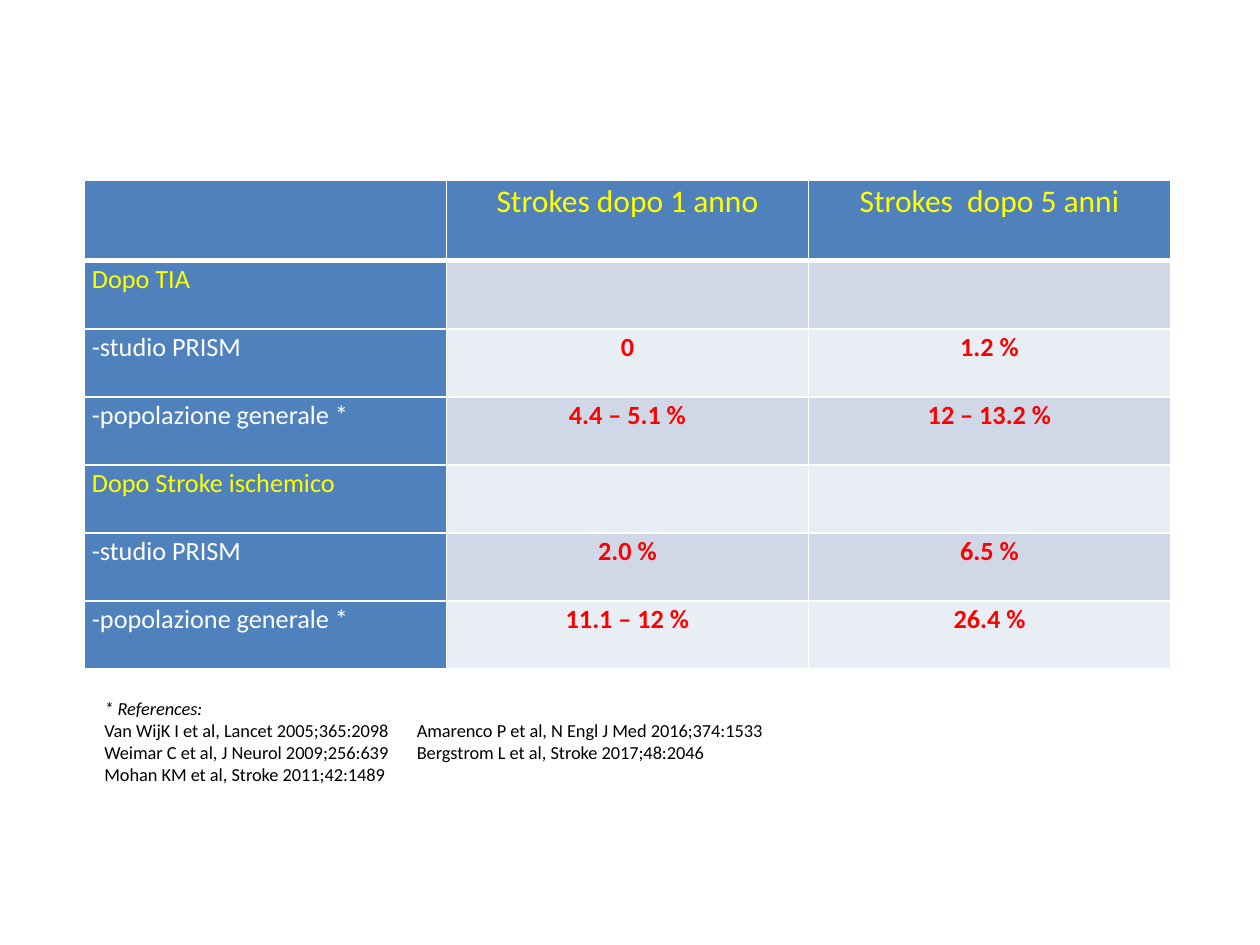
from dataclasses import dataclass

import pptx
import pptx.dml.color
import pptx.enum.text
import pptx.oxml
import pptx.oxml.ns
import pptx.util

Inches = pptx.util.Inches
Pt = pptx.util.Pt
ALIGN = pptx.enum.text.PP_ALIGN
FONT = "Calibri"
COLORS = {
    "blue": "4F81BD",
    "dark": "D0D8E8",
    "light": "E9EDF4",
    "yellow": "FFFF00",
    "white": "FFFFFF",
    "red": "FF0000",
    "black": "000000",
}


@dataclass
class Style:
    size: float
    color: str
    bold: bool = False
    italic: bool = False
    align: ALIGN = ALIGN.LEFT


@dataclass
class Row:
    label: str
    year: str = ""
    five: str = ""


HEAD = Style(18, "yellow", align=ALIGN.CENTER)
GROUP = Style(15, "yellow")
LABEL = Style(15, "white")
VALUE = Style(15, "red", bold=True, align=ALIGN.CENTER)
TITLE = Style(10.5, "black", italic=True)
NOTE = Style(10.5, "black")

ROWS = [
    Row("", "Strokes dopo 1 anno", "Strokes  dopo 5 anni"),
    Row("Dopo TIA"),
    Row("-studio PRISM", "0", "1.2 %"),
    Row("-popolazione generale *", "4.4 – 5.1 %", "12 – 13.2 %"),
    Row("Dopo Stroke ischemico"),
    Row("-studio PRISM", "2.0 %", "6.5 %"),
    Row("-popolazione generale *", "11.1 – 12 %", "26.4 %"),
]
NOTES = [
    "* References:",
    "Van WijK I et al, Lancet 2005;365:2098\tAmarenco P et al, N Engl J Med 2016;374:1533",
    "Weimar C et al, J Neurol 2009;256:639\tBergstrom L et al, Stroke 2017;48:2046",
    "Mohan KM et al, Stroke 2011;42:1489",
]


def rgb(name: str) -> pptx.dml.color.RGBColor:
    return pptx.dml.color.RGBColor.from_string(COLORS[name])


def style_text(para, style: Style) -> None:
    para.alignment = style.align
    for run in para.runs:
        font = run.font
        font.name = FONT
        font.size = Pt(style.size)
        font.bold = style.bold
        font.italic = style.italic
        font.color.rgb = rgb(style.color)


def add_edges(cell, base: float) -> None:
    """Draw white cell borders, 1 pt but for the bottom one."""
    props = cell._tc.get_or_add_tcPr()
    widths = {"lnL": 1, "lnR": 1, "lnT": 1, "lnB": base}
    for spot, (tag, width) in enumerate(widths.items()):
        edge = pptx.oxml.parse_xml(
            f'<a:{tag} {pptx.oxml.ns.nsdecls("a")} w="{Pt(width)}">'
            f'<a:solidFill><a:srgbClr val="{COLORS["white"]}"/></a:solidFill></a:{tag}>'
        )
        props.insert(spot, edge)


def fill_cell(cell, text: str, fill: str, style: Style, base: float) -> None:
    cell.fill.solid()
    cell.fill.fore_color.rgb = rgb(fill)
    add_edges(cell, base)
    if text:
        cell.margin_left = cell.margin_right = Inches(0.06)
        cell.margin_top = cell.margin_bottom = 0
        cell.text_frame.text = text
        para = cell.text_frame.paragraphs[0]
        para.line_spacing = 1.07
        style_text(para, style)


def add_rates(slide) -> None:
    frame = slide.shapes.add_table(
        len(ROWS), 3, Inches(0.67), Inches(1.43), Inches(8.62), Inches(3.88)
    )
    table = frame.table
    for col in table.columns:
        col.width = Inches(8.62 / 3)
    for i, row in enumerate(ROWS):
        head = i == 0
        table.rows[i].height = Inches(0.64 if head else 0.54)
        band = "blue" if head else "dark" if i % 2 else "light"
        side = LABEL if row.year else GROUP
        body = HEAD if head else VALUE
        base = 3 if head else 1
        fill_cell(table.cell(i, 0), row.label, "blue", side, base)
        for j, text in enumerate((row.year, row.five), 1):
            fill_cell(table.cell(i, j), text, band, body, base)


def add_tab(para, place: float) -> None:
    tabs = pptx.oxml.parse_xml(
        f'<a:tabLst {pptx.oxml.ns.nsdecls("a")}>'
        f'<a:tab pos="{Inches(place)}" algn="l"/></a:tabLst>'
    )
    para._p.get_or_add_pPr().append(tabs)


def add_notes(slide) -> None:
    box = slide.shapes.add_textbox(Inches(0.73), Inches(5.48), Inches(8.57), Inches(1.11))
    frame = box.text_frame
    frame.word_wrap = True
    frame.text = "\n".join(NOTES)
    for i, para in enumerate(frame.paragraphs):
        if "\t" in NOTES[i]:
            add_tab(para, 2.48)
        style_text(para, NOTE if i else TITLE)


def main() -> None:
    deck = pptx.Presentation()
    deck.slide_width = Inches(10)
    deck.slide_height = Inches(7.5)
    slide = deck.slides.add_slide(deck.slide_layouts[6])
    add_rates(slide)
    add_notes(slide)
    deck.save("out.pptx")


if __name__ == "__main__":
    main()
